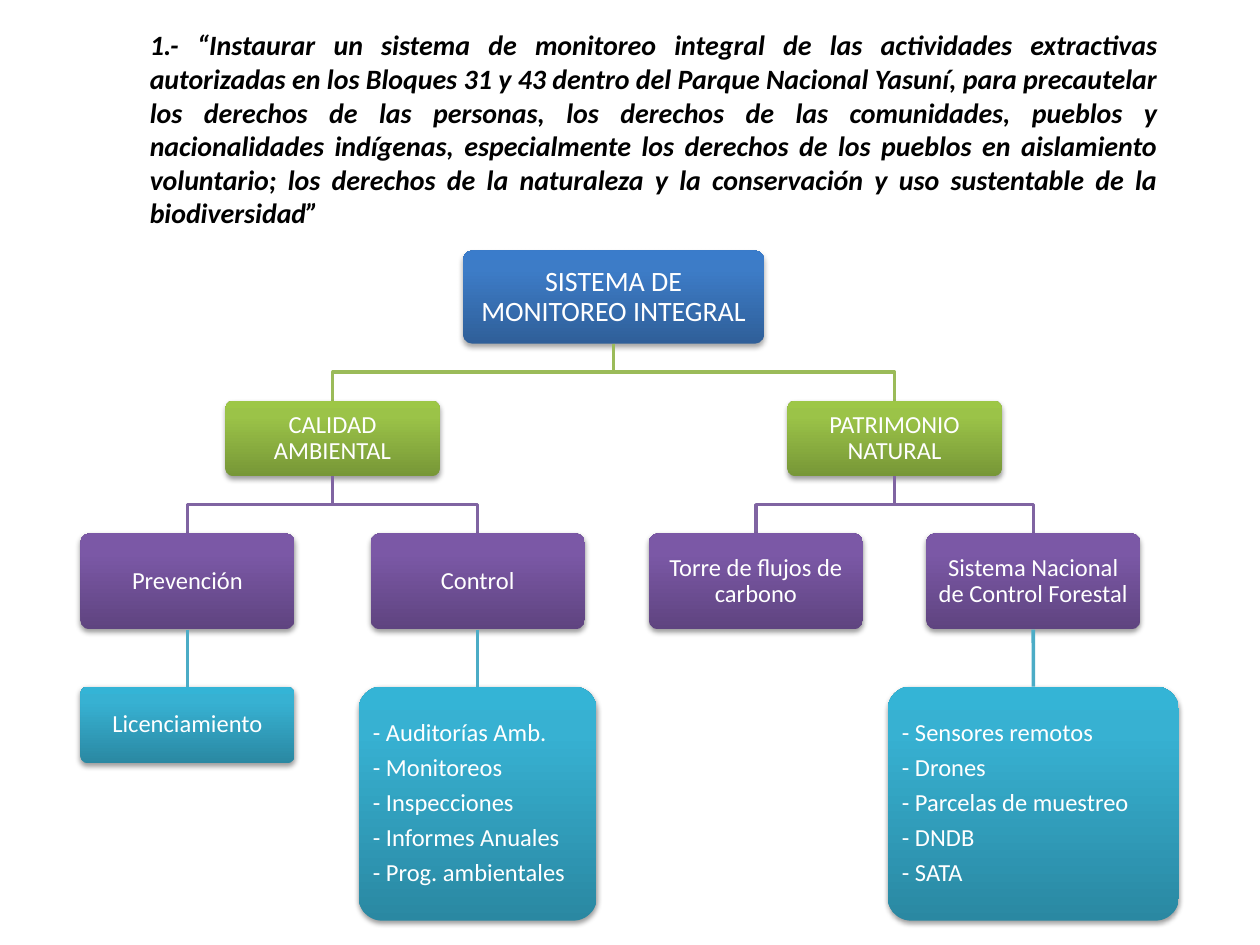
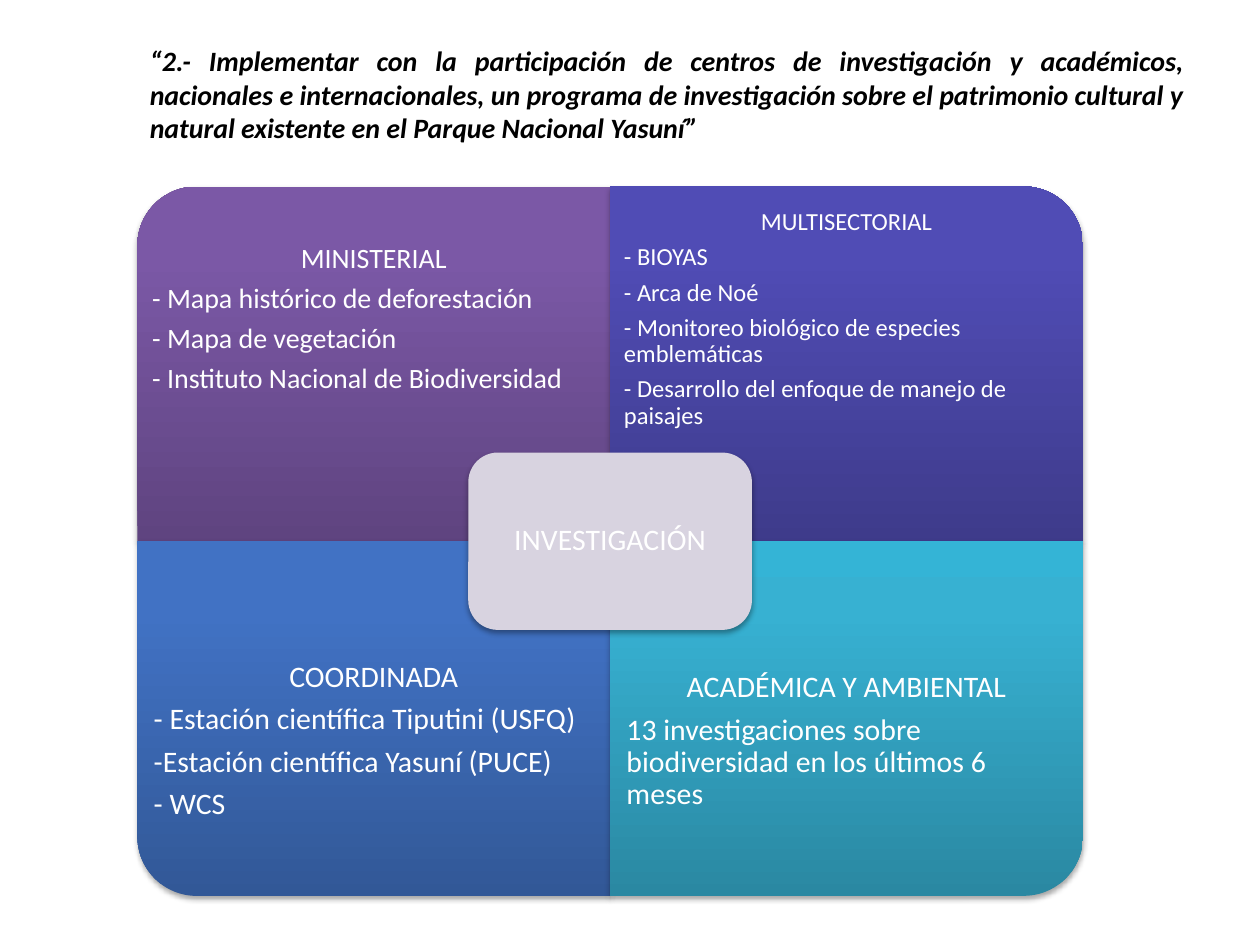
from copy import deepcopy

from pptx import Presentation
from pptx.dml.color import RGBColor
from pptx.enum.shapes import MSO_CONNECTOR, MSO_SHAPE
from pptx.enum.text import MSO_ANCHOR, PP_ALIGN
from pptx.oxml import parse_xml
from pptx.oxml.ns import nsdecls, qn
from pptx.util import Cm, Pt

BLACK = RGBColor(0x00, 0x00, 0x00)
WHITE = RGBColor(0xFF, 0xFF, 0xFF)
LILAC = RGBColor(0xD8, 0xD3, 0xE0)
GREEN_LINE = RGBColor(0x9B, 0xBB, 0x59)
PURPLE_LINE = RGBColor(0x80, 0x64, 0xA2)
AQUA_LINE = RGBColor(0x4B, 0xAC, 0xC6)

# Gradients run from the bottom (dark) to the top (light).
STOPS = (0, 0.8, 1)
BLUE = (RGBColor(0x2F, 0x5F, 0x99), RGBColor(0x3D, 0x7C, 0xC7), RGBColor(0x3A, 0x7C, 0xCB))
GREEN = (RGBColor(0x77, 0x97, 0x37), RGBColor(0x9B, 0xC3, 0x48), RGBColor(0x9D, 0xC7, 0x46))
PURPLE = (RGBColor(0x5F, 0x44, 0x80), RGBColor(0x7B, 0x58, 0xA6), RGBColor(0x7C, 0x57, 0xA8))
AQUA = (RGBColor(0x2A, 0x88, 0xA2), RGBColor(0x37, 0xB1, 0xD2), RGBColor(0x34, 0xB4, 0xD6))
INDIGO = (RGBColor(0x3E, 0x3B, 0x8B), RGBColor(0x50, 0x4C, 0xB5), RGBColor(0x4F, 0x4B, 0xB8))
ROYAL = (RGBColor(0x32, 0x58, 0x97), RGBColor(0x41, 0x72, 0xC4), RGBColor(0x3F, 0x72, 0xC7))

LEFT, CENTER = PP_ALIGN.LEFT, PP_ALIGN.CENTER
TITLE_FONT = {"name": "Calibri", "size": Pt(16), "bold": True, "italic": True}
BODY_FONT = {"name": "Calibri"}
SIDES = ("left", "top", "right", "bottom")


def set_all(obj, values):
    for name, value in values.items():
        setattr(obj, name, value)


class Deck:
    """Shared style plus the slide being drawn; lengths are in centimetres."""

    def __init__(self):
        self.prs = Presentation()
        self.prs.slide_width, self.prs.slide_height = Cm(25.4), Cm(19.05)

    def new_slide(self):
        self.shapes = self.prs.slides.add_slide(self.prs.slide_layouts[6]).shapes

    def put_text(self, sp, lines, size, inset, aligns, extra_bottom=0):
        tf = sp.text_frame
        set_all(tf, {"word_wrap": True, "vertical_anchor": MSO_ANCHOR.MIDDLE})
        set_all(tf, {f"margin_{side}": Cm(inset) for side in SIDES})
        tf.margin_bottom = Cm(inset + extra_bottom)
        for i, (line, align) in enumerate(zip(lines, aligns)):
            p = tf.paragraphs[0] if i == 0 else tf.add_paragraph()
            set_all(p, {"alignment": align, "line_spacing": 0.9, "space_after": Pt(0.35 * size)})
            r = p.add_run()
            r.text = line
            set_all(r.font, {**BODY_FONT, "size": Pt(size)})
            r.font.color.rgb = WHITE

    def title(self, text, top, width, height, anchor):
        sp = self.shapes.add_textbox(Cm(2.77), Cm(top), Cm(width), Cm(height))
        tf = sp.text_frame
        set_all(tf, {"word_wrap": True, "vertical_anchor": anchor})
        p = tf.paragraphs[0]
        p.alignment = PP_ALIGN.JUSTIFY
        r = p.add_run()
        r.text = text
        set_all(r.font, TITLE_FONT)
        r.font.color.rgb = BLACK

    def block(self, kind, cx, cy, width, height, fill, rotation=0, dist=1.8, alpha=35):
        """Add a shadowed shape around a centre; fill is a colour or gradient colours."""
        sp = self.shapes.add_shape(
            kind, Cm(cx - width / 2), Cm(cy - height / 2), Cm(width), Cm(height))
        sp.rotation = rotation
        sp.line.fill.background()
        if isinstance(fill, RGBColor):
            sp.fill.solid()
            sp.fill.fore_color.rgb = fill
        else:
            self.gradient(sp, fill)
        self.shadow(sp, dist, alpha)
        return sp

    def gradient(self, sp, colors):
        sp.fill.gradient()
        sp.fill.gradient_angle = 90
        grad = sp.element.spPr.find(qn("a:gradFill"))
        grad.set("rotWithShape", "0")
        stops = grad.find(qn("a:gsLst"))
        stops.append(deepcopy(stops[0]))
        for stop, position, color in zip(sp.fill.gradient_stops, STOPS, colors):
            stop.position = position
            stop.color.rgb = color

    def shadow(self, sp, dist, alpha):
        sp.shadow.inherit = False
        sp.element.spPr.find(qn("a:effectLst")).append(parse_xml(
            f'<a:outerShdw {nsdecls("a")} blurRad="{Pt(3.1)}" dist="{Pt(dist)}" '
            f'dir="5400000" rotWithShape="0"><a:srgbClr val="000000">'
            f'<a:alpha val="{alpha * 1000}"/></a:srgbClr></a:outerShdw>'))

    def node(self, cx, top, width, height, lines, fill, size=14, inset=0.15, align=CENTER,
             dist=1.6, alpha=38):
        sp = self.block(MSO_SHAPE.ROUNDED_RECTANGLE, cx, top + height / 2, width, height,
                        fill, dist=dist, alpha=alpha)
        sp.adjustments[0] = 0.1
        self.put_text(sp, lines, size, inset, [align] * len(lines))
        return sp

    def elbow(self, x1, y1, x2, y2, color):
        middle = (y1 + y2) / 2
        builder = self.shapes.build_freeform(Cm(x1), Cm(y1))
        builder.add_line_segments(
            [(Cm(x), Cm(y)) for x, y in ((x1, middle), (x2, middle), (x2, y2))], close=False)
        sp = builder.convert_to_shape()
        sp.fill.background()
        sp.shadow.inherit = False
        sp.line.width = Pt(2)
        sp.line.color.rgb = color

    def link(self, upper, lower, color):
        cxn = self.shapes.add_connector(MSO_CONNECTOR.STRAIGHT, 0, 0, 0, 0)
        cxn.begin_connect(upper, 2)
        cxn.end_connect(lower, 0)
        cxn.line.width = Pt(2)
        cxn.line.color.rgb = color
        cxn.element.spPr.append(parse_xml(f'<a:effectLst {nsdecls("a")}/>'))

    def textbox(self, left, top, width, height, *text):
        sp = self.shapes.add_textbox(Cm(left), Cm(top), Cm(width), Cm(height))
        self.put_text(sp, *text)


# (branch, [(leaf, centre, detail lines, detail width, detail height, alignment)])
BRANCHES = [
    ("CALIDAD AMBIENTAL", [
        ("Prevención", 3.78, ["Licenciamiento"], 4.32, 1.55, CENTER),
        ("Control", 9.63, ["- Auditorías Amb.", "- Monitoreos", "- Inspecciones",
                           "- Informes Anuales", "- Prog. ambientales"], 4.8, 4.72, LEFT)]),
    ("PATRIMONIO NATURAL", [
        ("Torre de flujos de carbono", 15.24, [], 0, 0, CENTER),
        ("Sistema Nacional de Control Forestal", 20.83,
         ["- Sensores remotos", "- Drones", "- Parcelas de muestreo", "- DNDB", "- SATA"],
         5.87, 4.72, LEFT)]),
]


def monitoring_slide(deck):
    deck.new_slide()
    deck.title("1.- “Instaurar un sistema de monitoreo integral de las actividades extractivas "
               "autorizadas en los Bloques 31 y 43 dentro del Parque Nacional Yasuní, para "
               "precautelar los derechos de las personas, los derechos de las comunidades, "
               "pueblos y nacionalidades indígenas, especialmente los derechos de los pueblos en "
               "aislamiento voluntario; los derechos de la naturaleza y la conservación y uso "
               "sustentable de la biodiversidad”", 0.79, 20.83, 3.61, MSO_ANCHOR.MIDDLE)
    gap, width = 1.15, 4.32
    root_top, root_h, branch_h, leaf_h = 5.05, 1.88, 1.52, 1.94
    branch_top = root_top + root_h + gap
    leaf_top = branch_top + branch_h + gap
    detail_top = leaf_top + leaf_h + gap

    # Every parent stands midway between its children.
    centres = [sum(leaf[1] for leaf in leaves) / len(leaves) for _, leaves in BRANCHES]
    root_x = sum(centres) / len(centres)
    deck.node(root_x, root_top, 6.07, root_h, ["SISTEMA DE MONITOREO INTEGRAL"], BLUE,
              size=16, inset=0.18, dist=1.8, alpha=35)
    for (branch, leaves), branch_x in zip(BRANCHES, centres):
        deck.elbow(root_x, root_top + root_h, branch_x, branch_top, GREEN_LINE)
        deck.node(branch_x, branch_top, width, branch_h, [branch], GREEN)
        for leaf, leaf_x, details, detail_w, detail_h, align in leaves:
            deck.elbow(branch_x, branch_top + branch_h, leaf_x, leaf_top, PURPLE_LINE)
            leaf_sp = deck.node(leaf_x, leaf_top, width, leaf_h, [leaf], PURPLE)
            if details:
                detail_sp = deck.node(leaf_x, detail_top, detail_w, detail_h, details, AQUA,
                                      align=align)
                deck.link(leaf_sp, detail_sp, AQUA_LINE)


# (column, row, rotation, gradient, size, inset, extra bottom inset, lines)
QUADRANTS = [
    (0, 0, 270, PURPLE, 16, 0.3, 0,
     ["MINISTERIAL", "- Mapa histórico de deforestación", "- Mapa de vegetación",
      "- Instituto Nacional de Biodiversidad"]),
    (1, 0, 0, INDIGO, 14, 0.28, 0,
     ["MULTISECTORIAL", "- BIOYAS", "- Arca de Noé",
      "- Monitoreo biológico de especies emblemáticas",
      "- Desarrollo del enfoque de manejo de paisajes"]),
    (0, 1, 180, ROYAL, 17, 0.33, 0.87,
     ["COORDINADA", "- Estación científica Tiputini (USFQ)",
      "-Estación científica Yasuní (PUCE)", "- WCS"]),
    (1, 1, 90, AQUA, 17, 0.33, 0.87,
     ["ACADÉMICA Y AMBIENTAL",
      "13 investigaciones sobre biodiversidad en los últimos 6 meses"]),
]


def research_slide(deck):
    deck.new_slide()
    deck.title("“2.- Implementar con la participación de centros de investigación y académicos, "
               "nacionales e internacionales, un programa de investigación sobre el patrimonio "
               "cultural y natural existente en el Parque Nacional Yasuní”",
               0.76, 21.36, 3.18, MSO_ANCHOR.TOP)
    left, top, width, height = 2.77, 3.76, 9.53, 7.15
    for col, row, rotation, fill, size, inset, extra, lines in QUADRANTS:
        x, y = left + col * width, top + row * height
        w, h = (height, width) if rotation % 180 else (width, height)
        deck.block(MSO_SHAPE.ROUND_1_RECTANGLE, x + width / 2, y + height / 2, w, h,
                   fill, rotation)
        # Text takes the outer three quarters, clear of the central box.
        deck.textbox(x, y + row * height / 4, width, height * 0.75, lines, size, inset,
                     [CENTER] + [LEFT] * (len(lines) - 1), extra)
    hub = deck.block(MSO_SHAPE.ROUNDED_RECTANGLE, left + width, top + height,
                     width * 0.6, height * 0.5, LILAC)
    deck.put_text(hub, ["INVESTIGACIÓN"], 17, 0.18, [CENTER])


def main():
    deck = Deck()
    monitoring_slide(deck)
    research_slide(deck)
    deck.prs.save("out.pptx")


if __name__ == "__main__":
    main()
